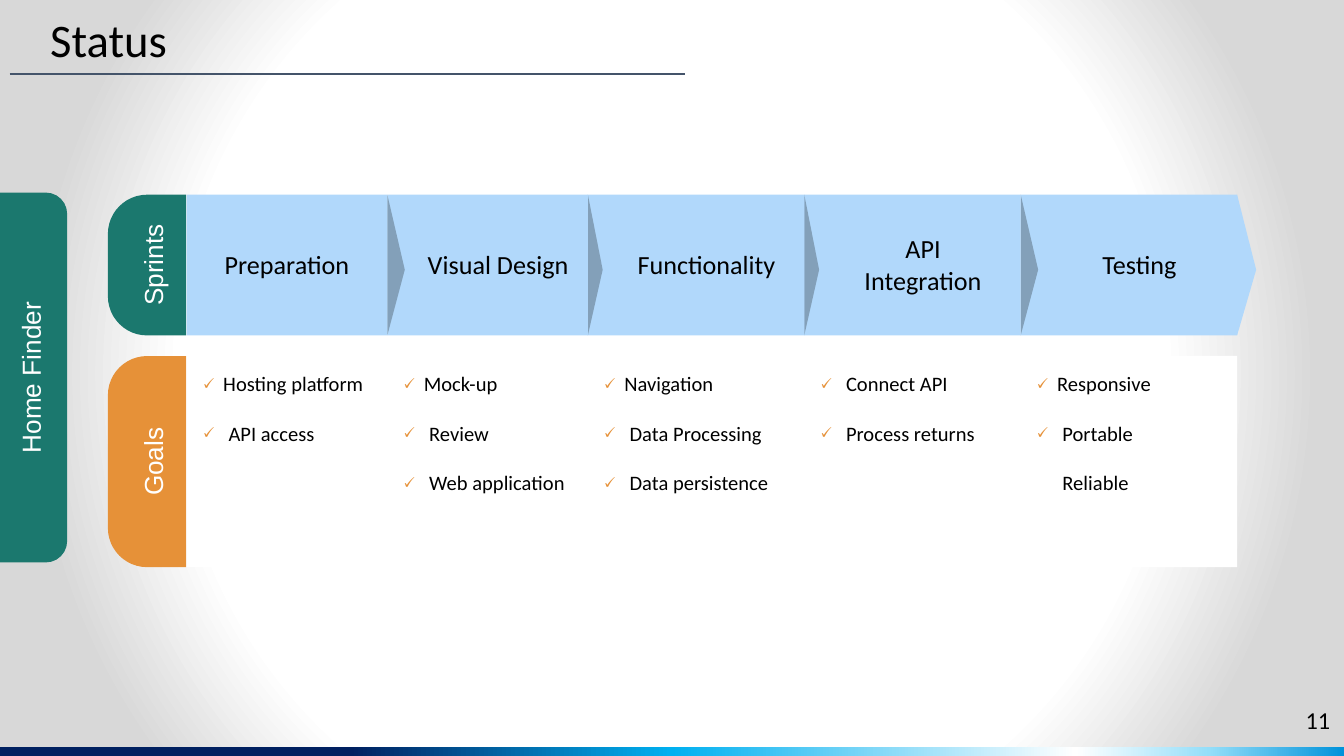
from dataclasses import dataclass

from lxml import etree
from pptx import Presentation
from pptx.dml.color import RGBColor
from pptx.enum.shapes import MSO_CONNECTOR, MSO_SHAPE
from pptx.enum.text import MSO_ANCHOR, PP_ALIGN
from pptx.oxml import parse_xml
from pptx.oxml.ns import nsdecls, qn
from pptx.util import Cm, Pt

RECTANGLE = MSO_SHAPE.RECTANGLE
TRIANGLE = MSO_SHAPE.ISOSCELES_TRIANGLE
ROUND_TOP = MSO_SHAPE.ROUND_2_SAME_RECTANGLE
LEFT, CENTER, RIGHT = PP_ALIGN.LEFT, PP_ALIGN.CENTER, PP_ALIGN.RIGHT


@dataclass(frozen=True)
class Theme:
    teal: str = "1B786E"
    orange: str = "E69138"
    sky: str = "B1D8FB"
    slate: str = "83A0B9"
    rule: str = "44546A"
    white: str = "FFFFFF"
    black: str = "000000"
    body: str = "Calibri"
    tab: str = "Arial"
    title_size: int = 25
    label_size: int = 14
    number_size: int = 13
    goal_size: int = 11


theme = Theme()


def add_block(kind, left, top, width, height, colour, turn=0):
    """Place a plain shape so that it fills the given box after turning."""
    wide, high = (height, width) if turn else (width, height)
    block = page.shapes.add_shape(
        kind, Cm(left + (width - wide) / 2), Cm(top + (height - high) / 2), Cm(wide), Cm(high))
    block.rotation = turn
    block.shadow.inherit = False
    block.fill.solid()
    block.fill.fore_color.rgb = RGBColor.from_string(colour)
    block.line.fill.background()
    return block


def write_text(box, text, size, align=CENTER, colour=theme.black, font=theme.body, inset=0.25):
    """Fill a box with text, one paragraph per line."""
    frame = box.text_frame
    frame.text = text
    frame.word_wrap = True
    frame.margin_left = frame.margin_right = frame.margin_top = frame.margin_bottom = Cm(inset)
    for para in frame.paragraphs:
        para.alignment = align
        for span in para.runs:
            span.font.size = Pt(size)
            span.font.name = font
            span.font.color.rgb = RGBColor.from_string(colour)
    return frame


deck = Presentation()
deck.slide_width, deck.slide_height = Cm(25.4), Cm(14.29)
page = deck.slides.add_slide(deck.slide_layouts[6])

# Gradient backdrop and bottom strip
radial = ('<a:path path="circle"><a:fillToRect l="50000" t="50000" r="50000" b="50000"/></a:path>')
gradients = [
    (0, 14.13, radial, [(0, "FFFFFF"), (64, "FFFFFF"), (84, "D8D8D8"), (100, "D8D8D8")]),
    (14.13, 0.16, '<a:lin ang="0" scaled="0"/>',
     [(0, "002060"), (26, "002060"), (50, "00B0F0"), (80, "FFFFFF"), (90, "94DEF9"),
      (100, "0092DA")]),
]
for top, height, direction, stops in gradients:
    panel = add_block(RECTANGLE, 0, top, 25.4, height, theme.white)
    stop_xml = "".join(
        f'<a:gs pos="{place * 1000}"><a:srgbClr val="{colour}"/></a:gs>' for place, colour in stops)
    gradient = parse_xml(
        f'<a:gradFill {nsdecls("a")} rotWithShape="1"><a:gsLst>{stop_xml}</a:gsLst>'
        f'{direction}</a:gradFill>')
    solid = panel.fill._xPr.find(qn("a:solidFill"))
    solid.getparent().replace(solid, gradient)

# Title with its rule
title = page.shapes.add_textbox(0, 0, Cm(23.67), Cm(1.6))
frame = write_text(title, "Status", theme.title_size, LEFT, inset=0.1)
frame.margin_left = Cm(0.95)
frame.vertical_anchor = MSO_ANCHOR.MIDDLE
frame.paragraphs[0].line_spacing = 0.9
rule = page.shapes.add_connector(MSO_CONNECTOR.STRAIGHT, Cm(0.18), Cm(1.4), Cm(12.95), Cm(1.4))
rule.line.color.rgb = RGBColor.from_string(theme.rule)
rule.line.width = Pt(0.75)
etree.SubElement(rule._element.spPr, qn("a:effectLst"))

# Side tabs
bar_top, bar_height = 3.68, 2.66
goals_top, goals_height = 6.73, 3.99
tabs = [
    ("Home Finder", 0, 3.64, 1.27, 6.99, theme.teal, (0, 0.317)),
    ("Sprints", 2.04, bar_top, 1.48, bar_height, theme.teal, (0.5, 0)),
    ("Goals", 2.04, goals_top, 1.48, goals_height, theme.orange, (0.5, 0)),
]
for text, left, top, width, height, colour, rounding in tabs:
    tab = add_block(ROUND_TOP, left, top, width, height, colour, 270)
    tab.adjustments[0], tab.adjustments[1] = rounding
    frame = write_text(tab, text, theme.label_size, colour=theme.white, font=theme.tab)
    frame.vertical_anchor = MSO_ANCHOR.MIDDLE

# Sprint stages: name, lines in the name, width, arrow tip depth, first indent, goals
stages = [
    ("Preparation", 1, 3.79, 0.33, 0.42, ["Hosting platform", "API access"]),
    ("Visual Design", 1, 3.79, 0.28, 0.42, ["Mock-up", "Review", "Web application"]),
    ("Functionality", 1, 4.09, 0.28, 0.42,
     ["Navigation", "Data Processing", "Data persistence"]),
    ("API Integration", 2, 4.09, 0.33, 0.52, ["Connect API", "Process returns"]),
    ("Testing", 1, 4.09, 0.36, 0.42, ["Responsive", "Portable", "Reliable"]),
]
unticked = {"Reliable"}
bar_left = 3.53
add_block(RECTANGLE, bar_left, goals_top, sum(stage[2] for stage in stages), goals_height,
          theme.white)

# Stages run from right to left so that each tip lies over the next bar
right = bar_left + sum(stage[2] for stage in stages)
for name, lines, width, depth, first_indent, goals in reversed(stages):
    left = right - width
    is_first, is_last = name == stages[0][0], name == stages[-1][0]
    tip = add_block(TRIANGLE, right, bar_top, depth, bar_height,
                    theme.sky if is_last else theme.slate, 90)
    tip.adjustments[0] = 0.534
    add_block(RECTANGLE, left, bar_top, width, bar_height, theme.sky)

    label_width, label_height = 3.4, 0.52 + 0.6 * lines
    label_left = left + (width - label_width) / 2 + (0 if is_first else 0.2)
    label = page.shapes.add_textbox(
        Cm(label_left), Cm(bar_top + (bar_height - label_height) / 2),
        Cm(label_width), Cm(label_height))
    write_text(label, name, theme.label_size)

    # Goals with tick bullets
    box = page.shapes.add_textbox(Cm(left + 0.02), Cm(6.76), Cm(3.76),
                                  Cm(0.07 + 0.93 * len(goals)))
    frame = write_text(box, "\n".join(goals), theme.goal_size, LEFT)
    for index, (para, goal) in enumerate(zip(frame.paragraphs, goals)):
        indent = Cm(0.52 if index else first_indent)
        para.space_before = Pt(13.4 if index else 0)
        layout = para._p.get_or_add_pPr()
        layout.set("marL", str(indent))
        if goal in unticked:
            continue
        layout.set("indent", str(-indent))
        for bullet in (f'<a:buClr {nsdecls("a")}><a:srgbClr val="{theme.orange}"/></a:buClr>',
                       f'<a:buFont {nsdecls("a")} typeface="{theme.body}"/>',
                       f'<a:buChar {nsdecls("a")} char="🗸"/>'):
            layout.append(parse_xml(bullet))
    right = left

# Page number
number = page.shapes.add_textbox(Cm(23.77), Cm(13.18), Cm(1.52), Cm(1.09))
write_text(number, "11", theme.number_size, RIGHT, inset=0.15)

deck.save("out.pptx")
